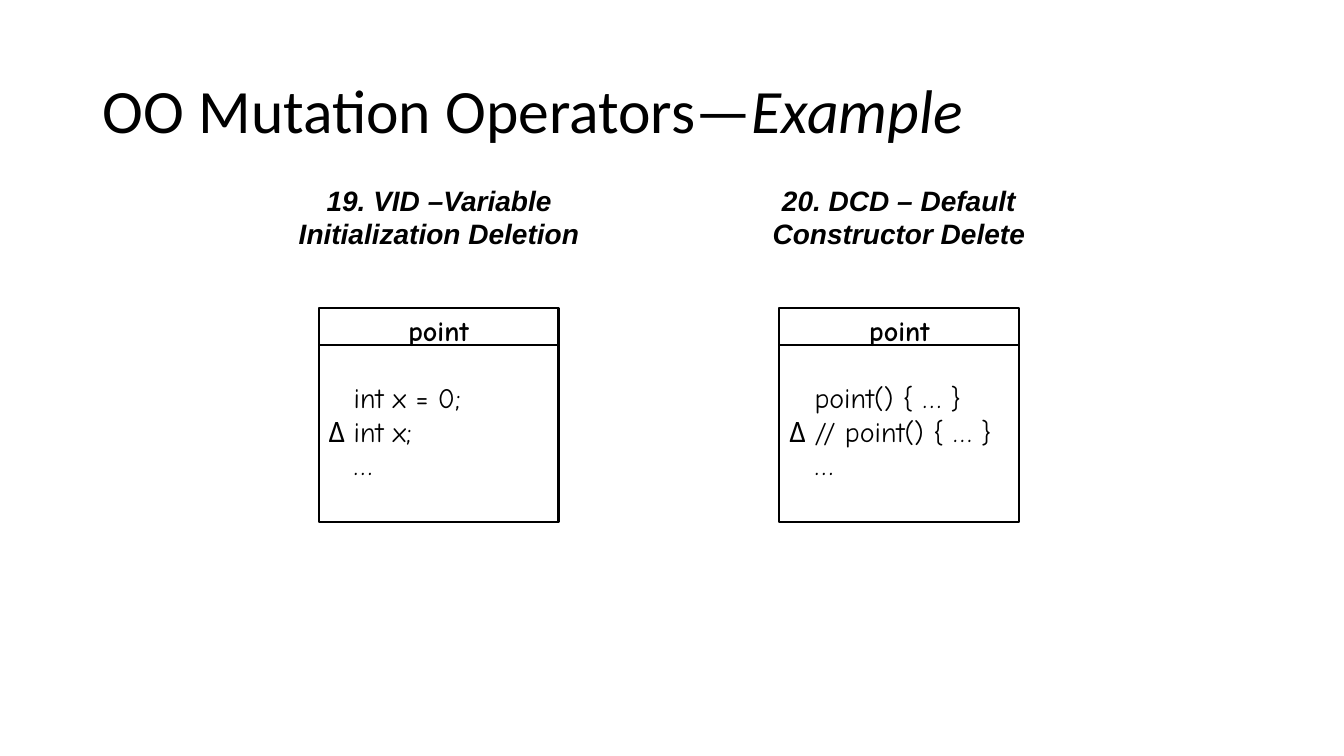
"""Builds a slide with two examples of object-oriented mutation operators."""
from dataclasses import dataclass

from lxml import etree
from pptx import Presentation
from pptx.dml.color import RGBColor
from pptx.enum.shapes import MSO_CONNECTOR, MSO_SHAPE
from pptx.enum.text import MSO_ANCHOR, PP_ALIGN
from pptx.oxml.ns import qn
from pptx.util import Inches, Pt

RECT, LINE = MSO_SHAPE.RECTANGLE, MSO_CONNECTOR.STRAIGHT
TOP, MIDDLE = MSO_ANCHOR.TOP, MSO_ANCHOR.MIDDLE
LEFT, CENTER = PP_ALIGN.LEFT, PP_ALIGN.CENTER
BLACK = RGBColor(0, 0, 0)

TITLE = {"name": "Calibri", "size": Pt(44), "bold": False}
CAPTION = {"name": "Arial", "size": Pt(20), "bold": True, "italic": True}
CLASS_NAME = {"name": "Comic Neue", "size": Pt(20), "bold": True}
CODE = {**CLASS_NAME, "bold": False}

BOX_TOP, BOX_W, BOX_H = 3.06, 2.38, 2.12
DIVIDER_Y = 3.42
CAPTION_TOP, CAPTION_H = 1.77, 0.77
TAB = 0.25


@dataclass
class Example:
    caption: str
    caption_left: float
    caption_width: float
    box_left: float
    code: tuple[str, ...]


EXAMPLES = [
    Example("19. VID –Variable Initialization Deletion", 2.54, 3.63, 3.16,
            ("\tint x = 0;", "Δ\tint x;", "\t…")),
    Example("20. DCD – Default Constructor Delete", 7.04, 3.75, 7.73,
            ("\tpoint() { … }", "Δ\t// point() { … }", "\t…")),
]


def add_run(p, text: str, style: dict) -> None:
    r = p.add_run()
    r.text = text
    for key, value in style.items():
        setattr(r.font, key, value)
    r.font.color.rgb = BLACK


def add_tab_stop(p) -> None:
    tabs = etree.SubElement(p._p.get_or_add_pPr(), qn("a:tabLst"))
    etree.SubElement(tabs, qn("a:tab"), pos=str(Inches(TAB)), algn="l")


def add_caption(shapes, example: Example) -> None:
    sp = shapes.add_textbox(Inches(example.caption_left), Inches(CAPTION_TOP),
                            Inches(example.caption_width), Inches(CAPTION_H))
    tf = sp.text_frame
    tf.word_wrap = True
    p = tf.paragraphs[0]
    p.alignment = CENTER
    add_run(p, example.caption, CAPTION)


def add_class_box(shapes, example: Example) -> None:
    sp = shapes.add_shape(RECT, Inches(example.box_left), Inches(BOX_TOP),
                          Inches(BOX_W), Inches(BOX_H))
    sp.shadow.inherit = False
    sp.fill.background()
    sp.line.color.rgb = BLACK
    sp.line.width = Pt(1.5)
    tf = sp.text_frame
    tf.word_wrap = True
    tf.vertical_anchor = TOP
    p = tf.paragraphs[0]
    p.alignment = CENTER
    p.space_after = Pt(24)
    add_run(p, "point", CLASS_NAME)
    for text in example.code:
        p = tf.add_paragraph()
        p.alignment = LEFT
        add_tab_stop(p)
        add_run(p, text, CODE)


def add_divider(shapes, example: Example) -> None:
    line = shapes.add_connector(LINE, Inches(example.box_left), Inches(DIVIDER_Y),
                                Inches(example.box_left + BOX_W), Inches(DIVIDER_Y))
    line.line.color.rgb = BLACK
    line.line.width = Pt(1.5)
    etree.SubElement(line._element.spPr, qn("a:effectLst"))


def add_title(s) -> None:
    sp = s.shapes.title
    sp.left, sp.top = Inches(0.92), Inches(0.4)
    sp.width, sp.height = Inches(11.5), Inches(1.45)
    tf = sp.text_frame
    tf.word_wrap = True
    tf.vertical_anchor = MIDDLE
    p = tf.paragraphs[0]
    p.alignment = LEFT
    p.line_spacing = 0.9
    add_run(p, "OO Mutation Operators—", TITLE)
    add_run(p, "Example", {**TITLE, "italic": True})


def main() -> None:
    prs = Presentation()
    prs.slide_width, prs.slide_height = Inches(13.33), Inches(7.5)
    s = prs.slides.add_slide(prs.slide_layouts[5])
    add_title(s)
    for example in EXAMPLES:
        group = s.shapes.add_group_shape()
        add_caption(group.shapes, example)
        add_class_box(group.shapes, example)
        add_divider(group.shapes, example)
    prs.save("out.pptx")


if __name__ == "__main__":
    main()
